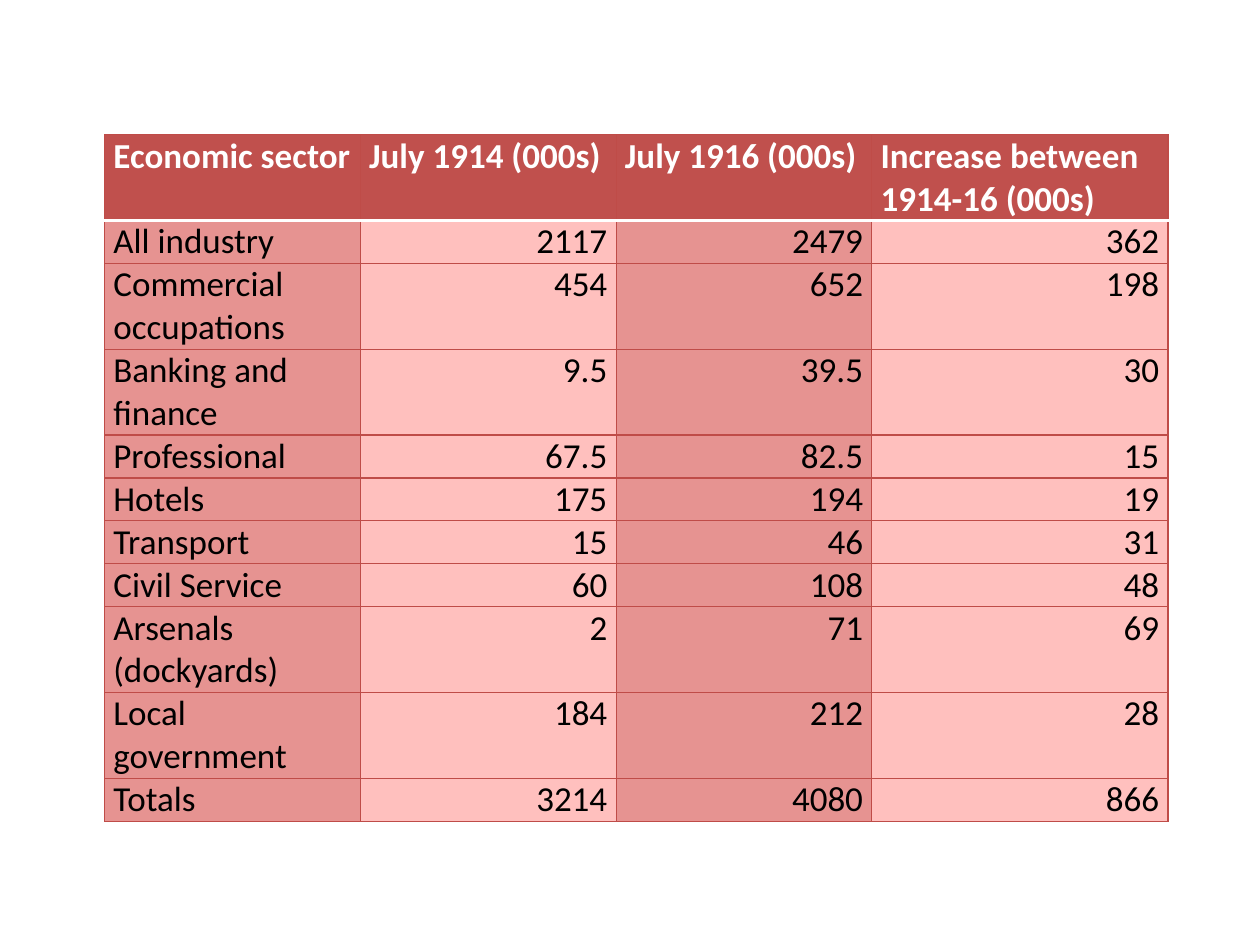
from lxml import etree
from pptx import Presentation
from pptx.dml.color import RGBColor
from pptx.enum import text
from pptx.oxml import ns
from pptx.util import Inches, Pt

HEADER_RED = RGBColor(0xC0, 0x50, 0x4D)
BORDER_RED = RGBColor(0xBF, 0x4C, 0x48)
DARK_PINK = RGBColor(0xE6, 0x93, 0x91)
LIGHT_PINK = RGBColor(0xFF, 0xC0, 0xBE)
WHITE = RGBColor(0xFF, 0xFF, 0xFF)
BLACK = RGBColor(0, 0, 0)

COLUMN_WIDTHS = [2.03, 2.03, 2.03, 2.35]
HEADER_HEIGHT = 0.4
LINE_HEIGHT = 0.33
ONE_LINE_CHARS = 13

HEADERS = ["Economic sector", "July 1914 (000s)", "July 1916 (000s)",
           "Increase between 1914-16 (000s)"]
SECTORS = [
    ("All industry", "2117", "2479", "362"),
    ("Commercial occupations", "454", "652", "198"),
    ("Banking and finance", "9.5", "39.5", "30"),
    ("Professional", "67.5", "82.5", "15"),
    ("Hotels", "175", "194", "19"),
    ("Transport", "15", "46", "31"),
    ("Civil Service", "60", "108", "48"),
    ("Arsenals (dockyards)", "2", "71", "69"),
    ("Local government", "184", "212", "28"),
    ("Totals", "3214", "4080", "866"),
]


def add_border(cell, side, color, width):
    """Draw one cell edge; side is L, R, T or B, added in that order."""
    tc_pr = cell._tc.get_or_add_tcPr()
    ln = etree.SubElement(tc_pr, ns.qn(f"a:ln{side}"), w=str(Pt(width)))
    fill = etree.SubElement(ln, ns.qn("a:solidFill"))
    etree.SubElement(fill, ns.qn("a:srgbClr"), val=str(color))


def style_cell(cell, value, row, col):
    is_header = row == 0
    for side in "LRTB":
        under_header = (row, side) in [(0, "B"), (1, "T")]
        color, width = (WHITE, 2) if under_header else (BORDER_RED, 0.75)
        add_border(cell, side, color, width)
    cell.fill.solid()
    band = LIGHT_PINK if col % 2 else DARK_PINK
    cell.fill.fore_color.rgb = HEADER_RED if is_header else band
    cell.margin_left = cell.margin_right = Inches(0.07)
    cell.margin_top = cell.margin_bottom = 0

    cell.text_frame.text = value
    p = cell.text_frame.paragraphs[0]
    if col and not is_header:
        p.alignment = text.PP_ALIGN.RIGHT
    font = p.runs[0].font
    font.name = "Calibri"
    font.size = Pt(20)
    font.bold = is_header
    font.color.rgb = WHITE if is_header else BLACK


def add_employment_table(slide):
    rows = [HEADERS, *SECTORS]
    heights = [HEADER_HEIGHT] + [
        LINE_HEIGHT * (2 if len(sector[0]) > ONE_LINE_CHARS else 1)
        for sector in SECTORS]
    table = slide.shapes.add_table(
        len(rows), len(HEADERS), Inches(0.83), Inches(1.07),
        Inches(sum(COLUMN_WIDTHS)), Inches(sum(heights))).table
    for column, width in zip(table.columns, COLUMN_WIDTHS):
        column.width = Inches(width)
    for r, (values, height) in enumerate(zip(rows, heights)):
        table.rows[r].height = Inches(height)
        for c, value in enumerate(values):
            style_cell(table.cell(r, c), value, r, c)


def main():
    prs = Presentation()
    prs.slide_width = Inches(10)
    prs.slide_height = Inches(7.5)
    slide = prs.slides.add_slide(prs.slide_layouts[6])
    add_employment_table(slide)
    prs.save("out.pptx")


if __name__ == "__main__":
    main()
